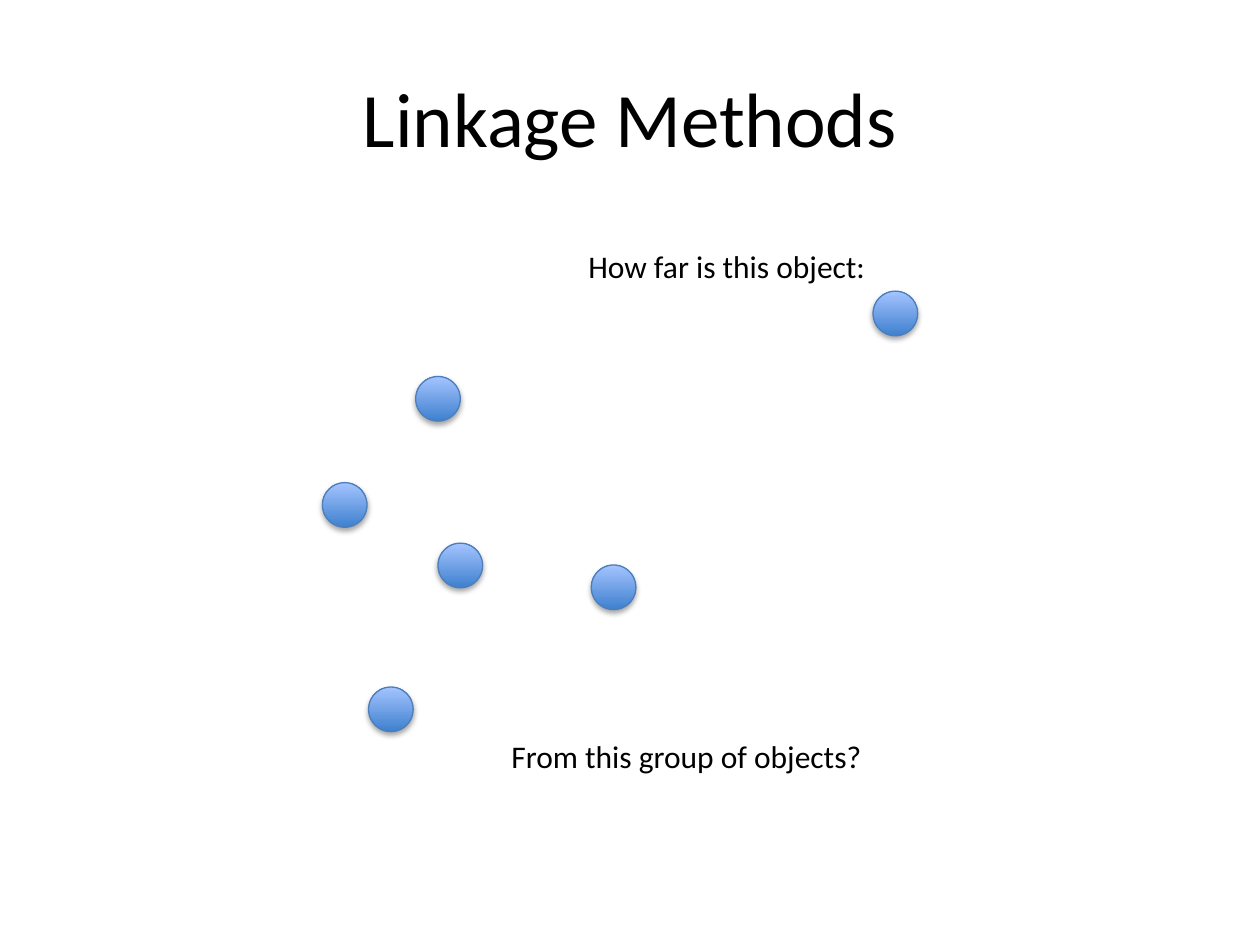
from lxml.etree import SubElement
from pptx import Presentation
from pptx.dml.color import RGBColor
from pptx.enum.shapes import MSO_SHAPE
from pptx.enum.text import MSO_ANCHOR, MSO_AUTO_SIZE, PP_ALIGN
from pptx.oxml.ns import qn
from pptx.util import Cm, Pt


def rgb(code):
    return RGBColor.from_string(code)


def style_text(p, size):
    for r in p.runs:
        r.font.name = "Calibri"
        r.font.size = Pt(size)
        r.font.color.rgb = rgb("000000")


prs = Presentation()
prs.slide_width, prs.slide_height = Cm(25.4), Cm(19.05)
s = prs.slides.add_slide(prs.slide_layouts[5])

title = s.shapes.title
title.left, title.top, title.width, title.height = Cm(1.27), Cm(0.76), Cm(22.86), Cm(3.18)
tf = title.text_frame
tf.text = "Linkage Methods"
tf.vertical_anchor = MSO_ANCHOR.MIDDLE
tf.paragraphs[0].alignment = PP_ALIGN.CENTER
style_text(tf.paragraphs[0], 44)

group = [(6.5, 9.73), (8.38, 7.59), (8.83, 10.95), (11.92, 11.39), (7.43, 13.85)]
lone_object = (17.6, 5.87)
diameter = Cm(0.9)

for x, y in group + [lone_object]:
    sp = s.shapes.add_shape(MSO_SHAPE.OVAL, Cm(x), Cm(y), diameter, diameter)
    sp.fill.gradient()
    sp.fill.gradient_angle = 90
    for stop, code in zip(sp.fill.gradient_stops, ("3F80CE", "A4C4FF")):
        stop.color.rgb = rgb(code)
    sp.line.color.rgb = rgb("4B7EBC")
    sp.line.width = Pt(0.75)
    sp.shadow.inherit = False
    effects = sp.element.spPr.find(qn("a:effectLst"))
    shadow = SubElement(effects, qn("a:outerShdw"), blurRad=str(Pt(3.1)),
                        dist=str(Pt(1.8)), dir="5400000", rotWithShape="0")
    color = SubElement(shadow, qn("a:srgbClr"), val="000000")
    SubElement(color, qn("a:alpha"), val="35000")

labels = [
    ("How far is this object:", 11.61, 4.85, 6.17),
    ("From this group of objects?", 10.06, 14.73, 7.67),
]
for text, x, y, width in labels:
    tf = s.shapes.add_textbox(Cm(x), Cm(y), Cm(width), Cm(1.02)).text_frame
    tf.text = text
    tf.word_wrap = False
    tf.auto_size = MSO_AUTO_SIZE.SHAPE_TO_FIT_TEXT
    style_text(tf.paragraphs[0], 18)

prs.save("out.pptx")
